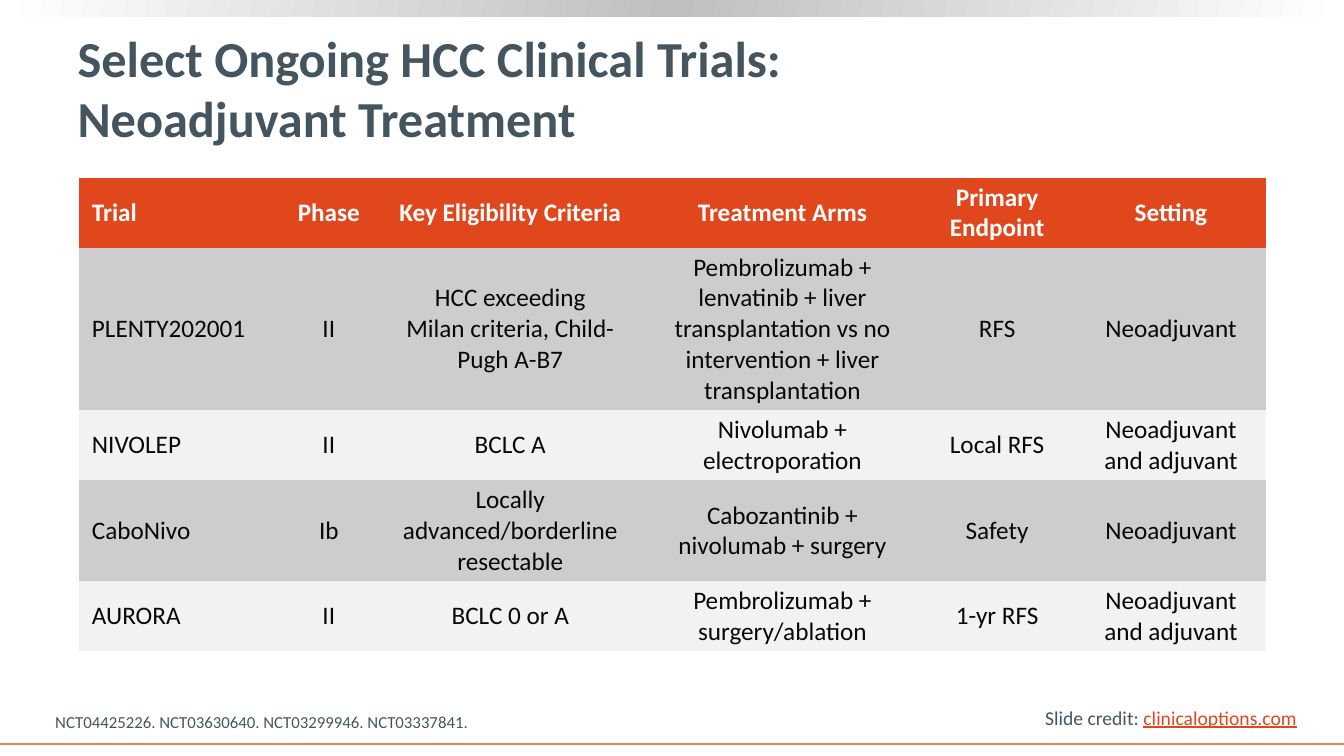
from copy import deepcopy
from dataclasses import dataclass

from lxml import etree
from pptx import Presentation
from pptx import util as u
from pptx.dml.color import RGBColor
from pptx.enum import shapes, text
from pptx.oxml import ns


@dataclass(frozen=True)
class Theme:
    font: str = "Calibri"
    slate: str = "455560"
    orange: str = "E1471D"
    rule: str = "F47D55"
    ink: str = "07080A"
    white: str = "FFFFFF"
    band_gray: str = "BFBFBF"
    row_dark: str = "CDCDCF"
    row_light: str = "F2F2F2"
    title_size: float = 36
    table_size: float = 18
    credit_size: float = 14
    note_size: float = 12


theme = Theme()


def format_runs(paragraph, size, color, bold=False):
    for run in paragraph.runs:
        run.font.name = theme.font
        run.font.size = u.Pt(size)
        run.font.bold = bold
        run.font.color.rgb = RGBColor.from_string(color)


def place(shape, left, top, width, height):
    shape.left, shape.top = u.Pt(left), u.Pt(top)
    shape.width, shape.height = u.Pt(width), u.Pt(height)


presentation = Presentation()
presentation.slide_width = u.Pt(960)
presentation.slide_height = u.Pt(540)
slide = presentation.slides.add_slide(presentation.slide_layouts[5])

band = slide.shapes.add_shape(
    shapes.MSO_SHAPE.RECTANGLE, u.Pt(0), u.Pt(0), u.Pt(960), u.Pt(11.5))
band.shadow.inherit = False
band.line.fill.background()
band.fill.gradient()
band.fill.gradient_angle = 170
stop_list = band._element.spPr.find(".//" + ns.qn("a:gsLst"))
stop_list.insert(1, deepcopy(stop_list[0]))
band_colors = [theme.white, theme.band_gray, theme.white]
for stop, position, color in zip(band.fill.gradient_stops, [0, 0.5, 1], band_colors):
    stop.position = position
    stop.color.rgb = RGBColor.from_string(color)

footer_rule = slide.shapes.add_connector(
    shapes.MSO_CONNECTOR.STRAIGHT, u.Pt(0), u.Pt(531.4), u.Pt(960), u.Pt(531.4))
footer_rule.line.color.rgb = RGBColor.from_string(theme.rule)
footer_rule.line.width = u.Pt(1.5)
etree.SubElement(footer_rule._element.spPr, ns.qn("a:effectLst"))

title = slide.shapes.title
place(title, 48.2, 18.7, 856, 87.1)
title.text_frame.text = "Select Ongoing HCC Clinical Trials:\vNeoadjuvant Treatment"
title.text_frame.word_wrap = True
title.text_frame.auto_size = text.MSO_AUTO_SIZE.NONE
title.text_frame.vertical_anchor = text.MSO_ANCHOR.MIDDLE
title_paragraph = title.text_frame.paragraphs[0]
title_paragraph.alignment = text.PP_ALIGN.LEFT
format_runs(title_paragraph, theme.title_size, theme.slate, bold=True)

trials = [
    ["Trial", "Phase", "Key Eligibility Criteria", "Treatment Arms",
     "Primary Endpoint", "Setting"],
    ["PLENTY202001", "II", "HCC exceeding\vMilan criteria, Child-Pugh A-B7",
     "Pembrolizumab + lenvatinib + liver transplantation vs no intervention"
     " + liver transplantation", "RFS", "Neoadjuvant"],
    ["NIVOLEP", "II", "BCLC A", "Nivolumab + electroporation", "Local RFS",
     "Neoadjuvant and adjuvant"],
    ["CaboNivo", "Ib", "Locally advanced/borderline resectable",
     "Cabozantinib + nivolumab + surgery", "Safety", "Neoadjuvant"],
    ["AURORA", "II", "BCLC 0 or A", "Pembrolizumab + surgery/ablation",
     "1-yr RFS", "Neoadjuvant and adjuvant"],
]
column_widths = [146.2, 64.8, 194.4, 194.4, 112.3, 136.1]
row_heights = [50.2, 115.8, 50.2, 72, 50.2]
table_frame = slide.shapes.add_table(
    len(trials), len(column_widths), u.Pt(56.3), u.Pt(127),
    u.Pt(sum(column_widths)), u.Pt(sum(row_heights)))
table = table_frame.table
table._tbl.tblPr.find(ns.qn("a:tableStyleId")).text = "{2D5ABB26-0587-4C30-8999-92F81FD0307C}"
for column, width in zip(table.columns, column_widths):
    column.width = u.Pt(width)

for row_index, (row, height, values) in enumerate(zip(table.rows, row_heights, trials)):
    row.height = u.Pt(height)
    is_header = row_index == 0
    body_fill = theme.row_dark if row_index % 2 else theme.row_light
    for column_index, (cell, value) in enumerate(zip(row.cells, values)):
        cell.fill.solid()
        cell.fill.fore_color.rgb = RGBColor.from_string(theme.orange if is_header else body_fill)
        cell.vertical_anchor = text.MSO_ANCHOR.MIDDLE
        cell.margin_left = cell.margin_right = u.Pt(9.4)
        cell.margin_top = cell.margin_bottom = u.Pt(2.9)
        cell.text_frame.text = value
        paragraph = cell.text_frame.paragraphs[0]
        paragraph.alignment = text.PP_ALIGN.CENTER if column_index else text.PP_ALIGN.LEFT
        format_runs(paragraph, theme.table_size,
                    theme.white if is_header else theme.ink, bold=is_header)

references = slide.shapes.add_textbox(u.Pt(32.4), u.Pt(504.7), u.Pt(365), u.Pt(21.8))
references.text_frame.word_wrap = True
references.text_frame.vertical_anchor = text.MSO_ANCHOR.BOTTOM
references.text_frame.text = "NCT04425226. NCT03630640. NCT03299946. NCT03337841."
format_runs(references.text_frame.paragraphs[0], theme.note_size, theme.slate)

credit = slide.shapes.add_textbox(u.Pt(739.4), u.Pt(500.4), u.Pt(195.8), u.Pt(24.5))
credit.text_frame.word_wrap = False
credit_paragraph = credit.text_frame.paragraphs[0]
credit_paragraph.text = "Slide credit: "
site = credit_paragraph.add_run()
site.text = "clinicaloptions.com"
format_runs(credit_paragraph, theme.credit_size, theme.slate)
site.font.underline = True
site.font.color.rgb = RGBColor.from_string(theme.orange)

presentation.save("out.pptx")
